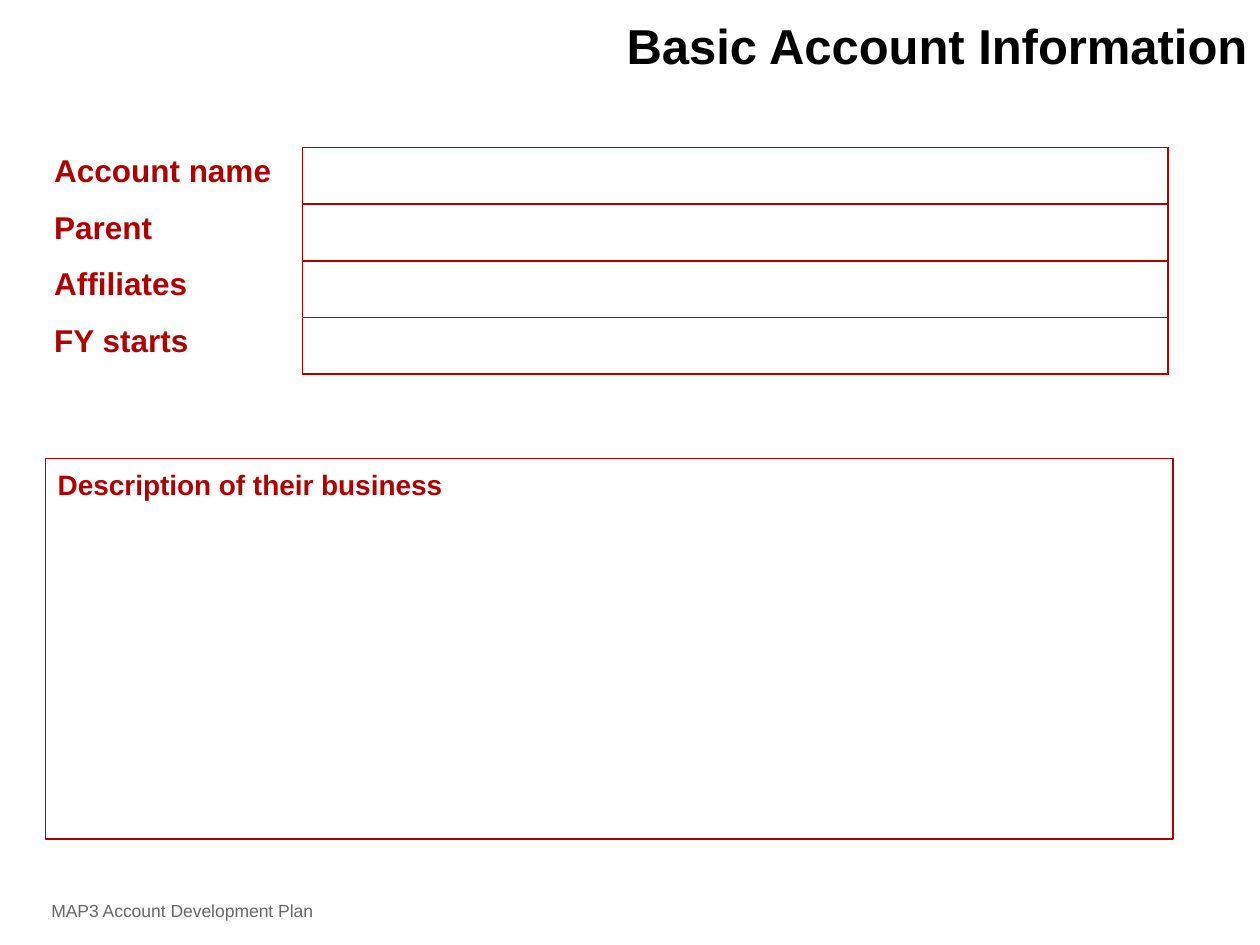
"""Build the basic account information slide."""
import pptx
import pptx.util
import pptx.dml.color
import pptx.enum.shapes
import pptx.enum.text
import pptx.oxml
import pptx.oxml.ns

Inches, Pt = pptx.util.Inches, pptx.util.Pt
Align = pptx.enum.text.PP_ALIGN
Anchor = pptx.enum.text.MSO_ANCHOR
HUES = {"red": "AF0000", "black": "000000", "grey": "676767"}
LABELS = ["Account name", "Parent", "Affiliates", "FY starts"]


def write(frame, text, size, hue, bold=True, align=Align.LEFT):
    frame.text = text
    line = frame.paragraphs[0]
    line.alignment = align
    font = line.runs[0].font
    font.name, font.size, font.bold = "Arial", Pt(size), bold
    font.color.rgb = pptx.dml.color.RGBColor.from_string(HUES[hue])


def edge(cell, sides):
    for spot, side in enumerate(sides):
        cell._tc.get_or_add_tcPr().insert(spot, pptx.oxml.parse_xml(
            f'<a:ln{side} {pptx.oxml.ns.nsdecls("a")} w="{Pt(1)}"><a:solidFill>'
            f'<a:srgbClr val="{HUES["red"]}"/></a:solidFill></a:ln{side}>'))


deck = pptx.Presentation()
deck.slide_width, deck.slide_height = Inches(10), Inches(7.5)
wide, high = deck.slide_width, deck.slide_height
slide = deck.slides.add_slide(deck.slide_layouts[5])

foot = slide.shapes.add_textbox(0, Inches(6.95), Inches(2.89), high - Inches(6.95))
foot.text_frame.word_wrap = True
foot.text_frame.vertical_anchor = Anchor.MIDDLE
write(foot.text_frame, "MAP3 Account Development Plan", 10, "grey", False, Align.CENTER)

title = slide.shapes.title
title.left, title.top, title.width, title.height = 0, 0, wide, Inches(0.79)
frame = title.text_frame
write(frame, "Basic Account Information", 28, "black", align=Align.RIGHT)
frame.word_wrap = False
frame.auto_size = pptx.enum.text.MSO_AUTO_SIZE.NONE
frame.vertical_anchor = Anchor.MIDDLE
frame.paragraphs[0].line_spacing = 0.85

cols, row = [Inches(2.07), Inches(6.87)], Inches(0.45)
grid = slide.shapes.add_table(len(LABELS), len(cols), Inches(0.33), Inches(1.17),
                              sum(cols), row * len(LABELS)).table
grid.first_row = grid.horz_banding = False
for col, width in zip(grid.columns, cols):
    col.width = width
for place, label in enumerate(LABELS):
    name, blank = grid.cell(place, 0), grid.cell(place, 1)
    for cell in (name, blank):
        cell.fill.background()
    write(name.text_frame, label, 18, "red")
    edge(name, "R")
    edge(blank, "LRTB")

box = slide.shapes.add_shape(pptx.enum.shapes.MSO_SHAPE.RECTANGLE, Inches(0.36),
                             Inches(3.64), Inches(8.95), Inches(3.02))
box.shadow.inherit = False
box.fill.background()
box.line.color.rgb = pptx.dml.color.RGBColor.from_string(HUES["red"])
box.line.width = Pt(0.75)
box.text_frame.word_wrap = True
box.text_frame.vertical_anchor = Anchor.TOP
box.text_frame.margin_top = Inches(0.07)
write(box.text_frame, "Description of their business", 16, "red")

deck.save("out.pptx")
